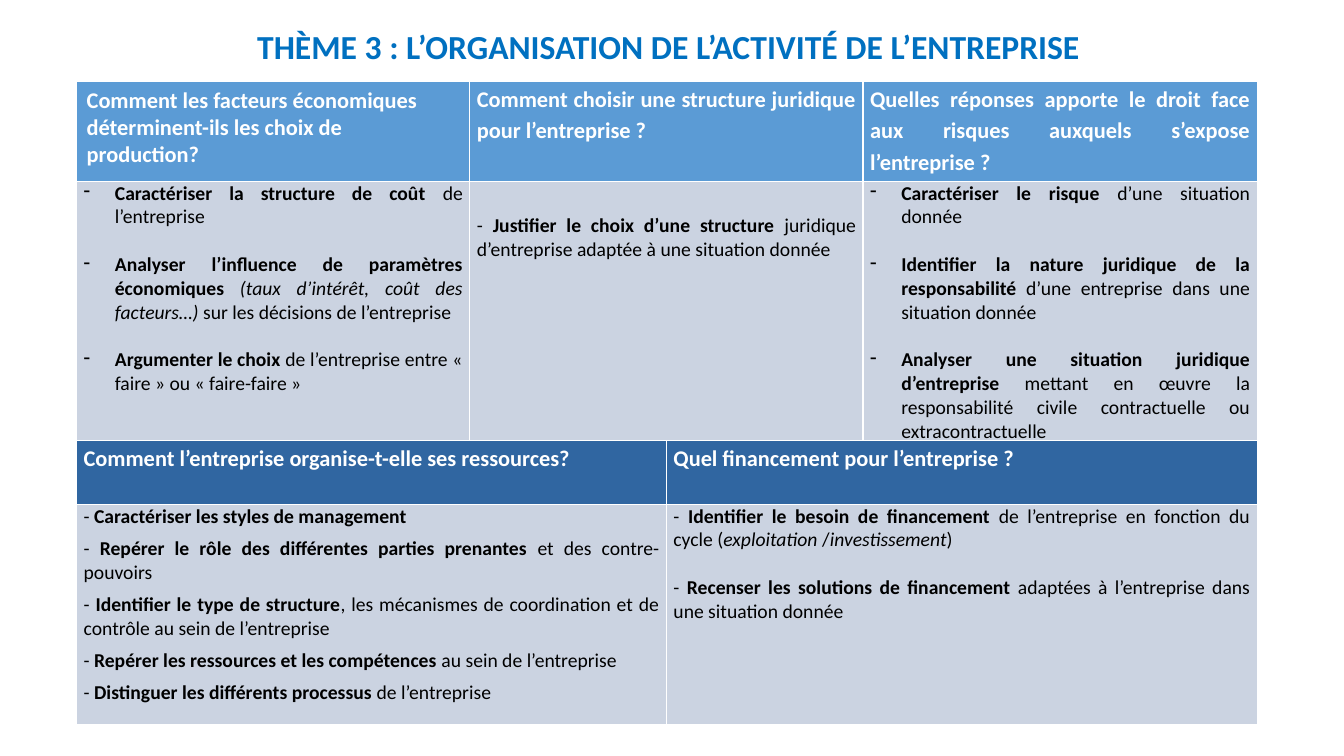
from pptx import Presentation
from pptx.util import Inches, Pt
from pptx.dml.color import RGBColor
from pptx.enum.text import PP_ALIGN, MSO_ANCHOR
from lxml.etree import SubElement
from pptx.oxml.ns import qn


def paint(fill, color):
    fill.solid()
    fill.fore_color.rgb = RGBColor.from_string(color)


def write(para, runs, size, color):
    for text, style in runs:
        run = para.add_run()
        run.text = text
        font = run.font
        font.name = "Calibri"
        font.size = Pt(size)
        font.bold = "b" in style
        font.italic = "i" in style
        paint(font.fill, color)


deck = Presentation()
deck.slide_width, deck.slide_height = Inches(13.33), Inches(7.5)
slide = deck.slides.add_slide(deck.slide_layouts[6])

title = slide.shapes.add_textbox(Inches(1.12), Inches(0.14), Inches(11.02), Inches(0.69))
frame = title.text_frame
frame.word_wrap = True
frame.vertical_anchor = MSO_ANCHOR.MIDDLE
para = frame.paragraphs[0]
para.alignment = PP_ALIGN.CENTER
para.line_spacing = 0.9
write(para, [("THÈME 3 : L’ORGANISATION DE L’ACTIVITÉ DE L’ENTREPRISE", "b")], 24, "0070C0")

table = slide.shapes.add_table(
    4, 4, Inches(0.76), Inches(0.81), Inches(11.71), Inches(6.36)).table
table.horz_banding = False
for col, width in zip(table.columns, [3.9, 1.95, 1.95, 3.91]):
    col.width = Inches(width)
for row, height in zip(table.rows, [0.99, 2.55, 0.63, 2.19]):
    row.height = Inches(height)
for row, first, last in [(0, 1, 2), (1, 1, 2), (2, 0, 1), (2, 2, 3), (3, 0, 1), (3, 2, 3)]:
    table.cell(row, first).merge(table.cell(row, last))

heads = [
    (0, 0, "5B9BD5", "Comment les facteurs économiques déterminent-ils les choix de production?"),
    (0, 1, "5B9BD5", "Comment choisir une structure juridique pour l’entreprise ?"),
    (0, 3, "5B9BD5", "Quelles réponses apporte le droit face aux risques auxquels s’expose l’entreprise ?"),
    (2, 0, "3066A1", "Comment l’entreprise organise-t-elle ses ressources?"),
    (2, 2, "3066A1", "Quel financement pour l’entreprise ?"),
]
for row, col, color, text in heads:
    cell = table.cell(row, col)
    paint(cell.fill, color)
    corner = row == col == 0
    cell.margin_left = cell.margin_right = Inches(0.1 if corner else 0.07)
    cell.margin_top = cell.margin_bottom = Inches(0.05 if corner else 0)
    para = cell.text_frame.paragraphs[0]
    para.alignment = PP_ALIGN.LEFT if corner else PP_ALIGN.JUSTIFY
    para.line_spacing = 1.0 if corner else 1.15
    write(para, [(text, "b")], 16, "FFFFFF")

bodies = [
    (1, 0, True, 0, 17, [
        [("Caractériser la structure de coût ", "b"), ("de l’entreprise", "")],
        [("Analyser l’influence de paramètres économiques ", "b"),
         ("(taux d’intérêt, coût des facteurs…) ", "i"),
         ("sur les décisions de l’entreprise", "")],
        [("Argumenter le choix ", "b"),
         ("de l’entreprise entre « faire » ou « faire-faire »", "")],
    ]),
    (1, 1, False, 0.32, 6, [
        [("Justifier le choix d’une structure ", "b"),
         ("juridique d’entreprise adaptée à une situation donnée", "")],
    ]),
    (1, 3, True, 0, 17, [
        [("Caractériser le risque ", "b"), ("d’une situation donnée", "")],
        [("Identifier la nature juridique de la responsabilité ", "b"),
         ("d’une entreprise dans une situation donnée", "")],
        [("Analyser une situation juridique d’entreprise", "b"),
         (" mettant en œuvre la responsabilité civile contractuelle ou extracontractuelle", "")],
    ]),
    (3, 0, False, 0, 6, [
        [("Caractériser les styles de management", "b")],
        [("Repérer le rôle des différentes parties prenantes ", "b"),
         ("et des contre-pouvoirs", "")],
        [("Identifier le type de structure", "b"),
         (", les mécanismes de coordination et de contrôle au sein de l’entreprise", "")],
        [("Repérer les ressources et les compétences ", "b"), ("au sein de l’entreprise", "")],
        [("Distinguer les différents processus ", "b"), ("de l’entreprise", "")],
    ]),
    (3, 2, False, 0, 17, [
        [("Identifier le besoin de financement ", "b"),
         ("de l’entreprise en fonction du cycle (", ""),
         ("exploitation", "i"), (" /", ""), ("investissement", "i"), (")", "")],
        [("Recenser les solutions de financement ", "b"),
         ("adaptées à l’entreprise dans une situation donnée", "")],
    ]),
]
for row, col, listed, top, gap, items in bodies:
    cell = table.cell(row, col)
    paint(cell.fill, "CBD3E1")
    cell.margin_left = cell.margin_right = Inches(0.07)
    cell.margin_top, cell.margin_bottom = Inches(top), Inches(0)
    frame = cell.text_frame
    for index, runs in enumerate(items):
        para = frame.add_paragraph() if index else frame.paragraphs[0]
        para.alignment = PP_ALIGN.JUSTIFY
        if index < len(items) - 1:
            para.space_after = Pt(gap)
        if listed:
            props = para._p.get_or_add_pPr()
            props.set("marL", str(Inches(0.31)))
            props.set("indent", str(-Inches(0.31)))
            SubElement(props, qn("a:buChar")).set("char", "-")
        else:
            runs = [("- ", "")] + runs
        write(para, runs, 14, "000000")

deck.save("out.pptx")
